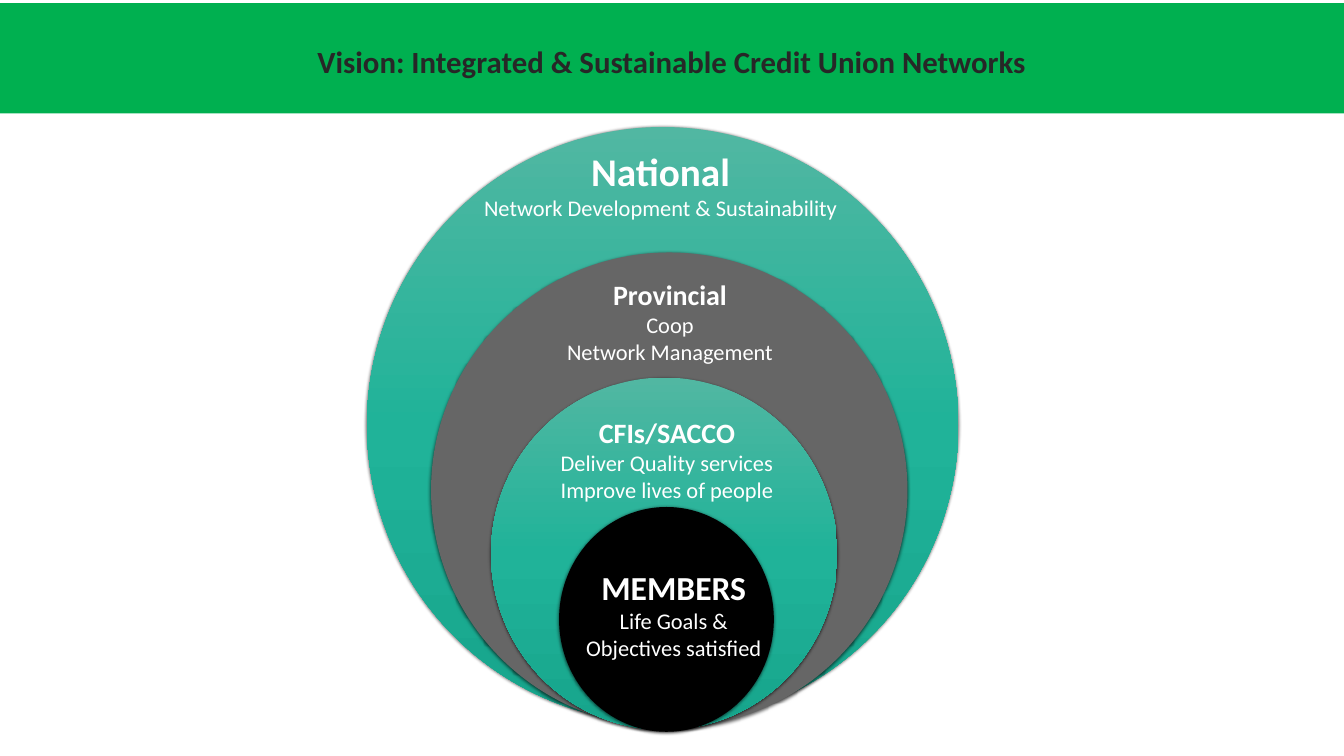
from copy import deepcopy

from lxml.etree import SubElement
from pptx import Presentation
from pptx.dml.color import RGBColor
from pptx.enum.shapes import MSO_SHAPE
from pptx.enum.text import MSO_ANCHOR, PP_ALIGN
from pptx.oxml.ns import qn
from pptx.util import Inches, Pt

GREEN = RGBColor(0x00, 0xB0, 0x50)
CHARCOAL = RGBColor(0x27, 0x27, 0x27)
GREY = RGBColor(0x66, 0x66, 0x66)
BLACK = RGBColor(0x00, 0x00, 0x00)
WHITE = RGBColor(0xFF, 0xFF, 0xFF)
TEAL_STOPS = (
    (0, RGBColor(0x51, 0xB7, 0xA2)),
    (0.5, RGBColor(0x20, 0xB3, 0x99)),
    (1, RGBColor(0x17, 0xA5, 0x8C)),
)
FONT = "Calibri"
DETAIL_SIZE = 32

CIRCLES = (
    (7.28, 2.52, 11.73, 11.82, None),
    (8.55, 5.01, 9.45, 9.43, GREY),
    (9.74, 7.49, 6.87, 6.99, None),
    (11.09, 10.06, 4.26, 4.46, BLACK),
)
LEVELS = (
    ((11.39, 11.19, 3.95, 1.99), "MEMBERS", 48, ["Life Goals & Objectives satisfied"]),
    ((10.22, 8.19, 6.02, 3.33), "CFIs/SACCO", 40,
     ["Deliver Quality services", "Improve lives of people"]),
    ((9.68, 5.45, 7.22, 1.85), "Provincial", 40, ["Coop", "Network Management"]),
    ((9.34, 2.87, 7.53, 1.58), "National", 56, ["Network Development & Sustainability"]),
)


def add_run(paragraph, text, size, color, bold):
    """Add one formatted run to a centred paragraph."""
    paragraph.alignment = PP_ALIGN.CENTER
    run = paragraph.add_run()
    run.text = text
    run.font.name = FONT
    run.font.size = Pt(size)
    run.font.bold = bold
    run.font.color.rgb = color


def fill_teal(shape):
    """Fill a shape with the three-stop teal gradient, top to bottom."""
    shape.fill.gradient()
    shape.fill.gradient_angle = 270
    stop_list = shape._element.spPr.find(qn("a:gradFill")).find(qn("a:gsLst"))
    stop_list.append(deepcopy(stop_list[0]))
    for stop, (position, color) in zip(shape.fill.gradient_stops, TEAL_STOPS):
        stop.position = position
        stop.color.rgb = color


def add_soft_shadow(shape):
    """Give a shape a soft shadow falling straight down."""
    shape.shadow.inherit = False
    effects = shape._element.spPr.find(qn("a:effectLst"))
    shadow = SubElement(effects, qn("a:outerShdw"), blurRad=str(Pt(4.5)),
                        dist=str(Pt(1.5)), dir="5400000", rotWithShape="0")
    color = SubElement(shadow, qn("a:srgbClr"), val=str(BLACK))
    SubElement(color, qn("a:alpha"), val="63000")


def add_circle(slide, left, top, width, height, color):
    """Add one nested circle, teal when no plain colour is given."""
    shape = slide.shapes.add_shape(MSO_SHAPE.OVAL, Inches(left), Inches(top),
                                   Inches(width), Inches(height))
    if color is None:
        fill_teal(shape)
    else:
        shape.fill.solid()
        shape.fill.fore_color.rgb = color
    shape.line.fill.background()
    add_soft_shadow(shape)


def add_level_text(slide, box, heading, heading_size, details):
    """Add the heading and details of one network level."""
    text_frame = slide.shapes.add_textbox(*map(Inches, box)).text_frame
    text_frame.word_wrap = True
    add_run(text_frame.paragraphs[0], heading, heading_size, WHITE, True)
    for detail in details:
        add_run(text_frame.add_paragraph(), detail, DETAIL_SIZE, WHITE, False)


def set_title(slide, text):
    """Turn the title placeholder into the green band."""
    title = slide.shapes.title
    title.left, title.top = Inches(0), Inches(0.06)
    title.width, title.height = Inches(26.66), Inches(2.19)
    title.fill.solid()
    title.fill.fore_color.rgb = GREEN
    text_frame = title.text_frame
    text_frame.word_wrap = True
    text_frame.vertical_anchor = MSO_ANCHOR.MIDDLE
    text_frame.margin_top = Inches(0.15)
    add_run(text_frame.paragraphs[0], text, 44, CHARCOAL, True)


def main():
    """Build the slide and save it."""
    presentation = Presentation()
    presentation.slide_width = Inches(26.66)
    presentation.slide_height = Inches(15)
    slide = presentation.slides.add_slide(presentation.slide_layouts[5])
    set_title(slide, "Vision: Integrated & Sustainable Credit Union Networks")
    for circle in CIRCLES:
        add_circle(slide, *circle)
    for level in LEVELS:
        add_level_text(slide, *level)
    presentation.save("out.pptx")


if __name__ == "__main__":
    main()
